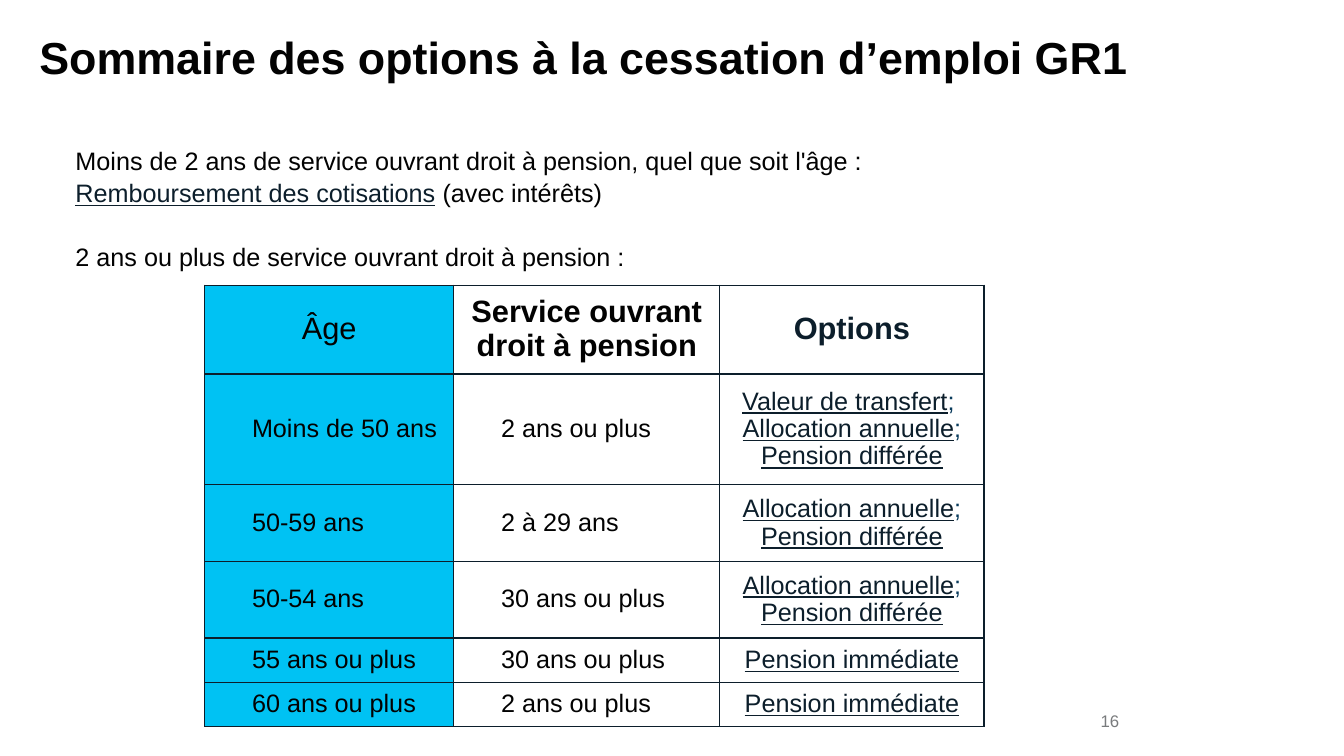
from pptx import Presentation
from pptx.dml.color import RGBColor
from pptx.enum.text import MSO_ANCHOR, PP_ALIGN
from pptx.oxml.ns import qn
from pptx.util import Inches, Pt
from lxml import etree

BLACK = RGBColor(0x02, 0x02, 0x02)
NAVY = RGBColor(0x0C, 0x1E, 0x2B)
BLUE = RGBColor(0x09, 0x3B, 0x5C)
CYAN = RGBColor(0x00, 0xC2, 0xF3)
WHITE = RGBColor(0xFF, 0xFF, 0xFF)
GREY = RGBColor(0x79, 0x7B, 0x7D)
LEFT, CENTER, RIGHT = PP_ALIGN.LEFT, PP_ALIGN.CENTER, PP_ALIGN.RIGHT
TOP, MIDDLE = MSO_ANCHOR.TOP, MSO_ANCHOR.MIDDLE

# Runs that can be looked up: (text, colour, underlined)
SEPARATOR = ("; ", BLUE, False)
TRANSFER = ("Valeur de transfert", NAVY, True)
ALLOWANCE = ("Allocation annuelle", NAVY, True)
DEFERRED = ("Pension différée", NAVY, True)
IMMEDIATE = ("Pension immédiate", NAVY, True)
ALLOWANCE_OR_DEFERRED = [ALLOWANCE, SEPARATOR, DEFERRED]

COLUMN_WIDTHS = [2.47, 2.64, 2.62]
ROW_HEIGHTS = [0.88, 1.1, 0.76, 0.76, 0.44, 0.44]
HEADERS = [("Âge", BLACK), ("Service ouvrant droit à pension", BLACK), ("Options", NAVY)]
OPTIONS_BY_AGE = [
    ("Moins de 50 ans", "2 ans ou plus", [[TRANSFER, SEPARATOR], ALLOWANCE_OR_DEFERRED]),
    ("50-59 ans", "2 à 29 ans", [ALLOWANCE_OR_DEFERRED]),
    ("50-54 ans", "30 ans ou plus", [ALLOWANCE_OR_DEFERRED]),
    ("55 ans ou plus", "30 ans ou plus", [[IMMEDIATE]]),
    ("60 ans ou plus", "2 ans ou plus", [[IMMEDIATE]]),
]


def plain(text, color=BLACK):
    """One paragraph holding one run."""
    return [[(text, color, False)]]


def write(frame, paragraphs, size, bold=False, align=LEFT, spacing=1.0):
    for index, runs in enumerate(paragraphs):
        paragraph = frame.paragraphs[0] if index == 0 else frame.add_paragraph()
        paragraph.alignment = align
        paragraph.line_spacing = spacing
        for text, color, underlined in runs:
            run = paragraph.add_run()
            run.text = text
            run.font.name = "Arial"
            run.font.size = Pt(size)
            run.font.bold = bold
            run.font.underline = underlined
            run.font.color.rgb = color


def add_text(slide, box, paragraphs, size, anchor=TOP, inset=True, **style):
    frame = slide.shapes.add_textbox(*map(Inches, box)).text_frame
    frame.word_wrap = True
    frame.vertical_anchor = anchor
    if not inset:
        frame.margin_left = frame.margin_right = 0
        frame.margin_top = frame.margin_bottom = 0
    write(frame, paragraphs, size, **style)


def set_borders(cell):
    properties = cell._tc.get_or_add_tcPr()
    for index, side in enumerate(("a:lnL", "a:lnR", "a:lnT", "a:lnB")):
        line = etree.Element(qn(side), w=str(Pt(1)))
        fill = etree.SubElement(line, qn("a:solidFill"))
        etree.SubElement(fill, qn("a:srgbClr"), val=str(NAVY))
        properties.insert(index, line)


def fill_cell(cell, color, paragraphs, size, indent=0.1, **style):
    cell.vertical_anchor = MIDDLE
    cell.margin_left = Inches(indent)
    cell.fill.solid()
    cell.fill.fore_color.rgb = color
    set_borders(cell)
    write(cell.text_frame, paragraphs, size, spacing=0.97, **style)


def add_options_table(slide):
    table = slide.shapes.add_table(
        len(ROW_HEIGHTS), len(COLUMN_WIDTHS), Inches(2.03), Inches(2.83),
        Inches(sum(COLUMN_WIDTHS)), Inches(sum(ROW_HEIGHTS))).table
    table.horz_banding = False
    for column, width in zip(table.columns, COLUMN_WIDTHS):
        column.width = Inches(width)
    for row, height in zip(table.rows, ROW_HEIGHTS):
        row.height = Inches(height)

    # Header row
    for index, (header, color) in enumerate(HEADERS):
        fill_cell(table.cell(0, index), WHITE if index else CYAN,
                  plain(header, color), 22, bold=index > 0, align=CENTER)

    # One row per age group
    for index, (age, service, options) in enumerate(OPTIONS_BY_AGE, start=1):
        fill_cell(table.cell(index, 0), CYAN, plain(age), 18, indent=0.47)
        fill_cell(table.cell(index, 1), WHITE, plain(service), 18, indent=0.47)
        fill_cell(table.cell(index, 2), WHITE, options, 18, align=CENTER)


def main():
    deck = Presentation()
    deck.slide_width, deck.slide_height = Inches(13.33), Inches(7.5)
    slide = deck.slides.add_slide(deck.slide_layouts[6])

    # Title
    add_text(slide, (0.39, 0.35, 11.21, 0.79),
             plain("Sommaire des options à la cessation d’emploi GR1"),
             32, inset=False, bold=True, spacing=0.9)

    # Less than two years of service
    refund = [("Remboursement des cotisations", NAVY, True),
              (" ", BLUE, False), ("(avec intérêts)", BLACK, False)]
    under_two_years = plain(
        "Moins de 2 ans de service ouvrant droit à pension, quel que soit l'âge :")
    add_text(slide, (0.65, 1.37, 10.69, 0.71), under_two_years + [refund], 18, spacing=1.07)

    # Two years of service or more
    add_text(slide, (0.65, 2.32, 9.97, 0.4),
             plain("2 ans ou plus de service ouvrant droit à pension :"), 18, spacing=1.07)
    add_options_table(slide)

    # Slide number
    add_text(slide, (9.63, 6.95, 1.57, 0.4), plain("16", GREY), 12, anchor=MIDDLE, align=RIGHT)

    deck.save("out.pptx")


if __name__ == "__main__":
    main()
